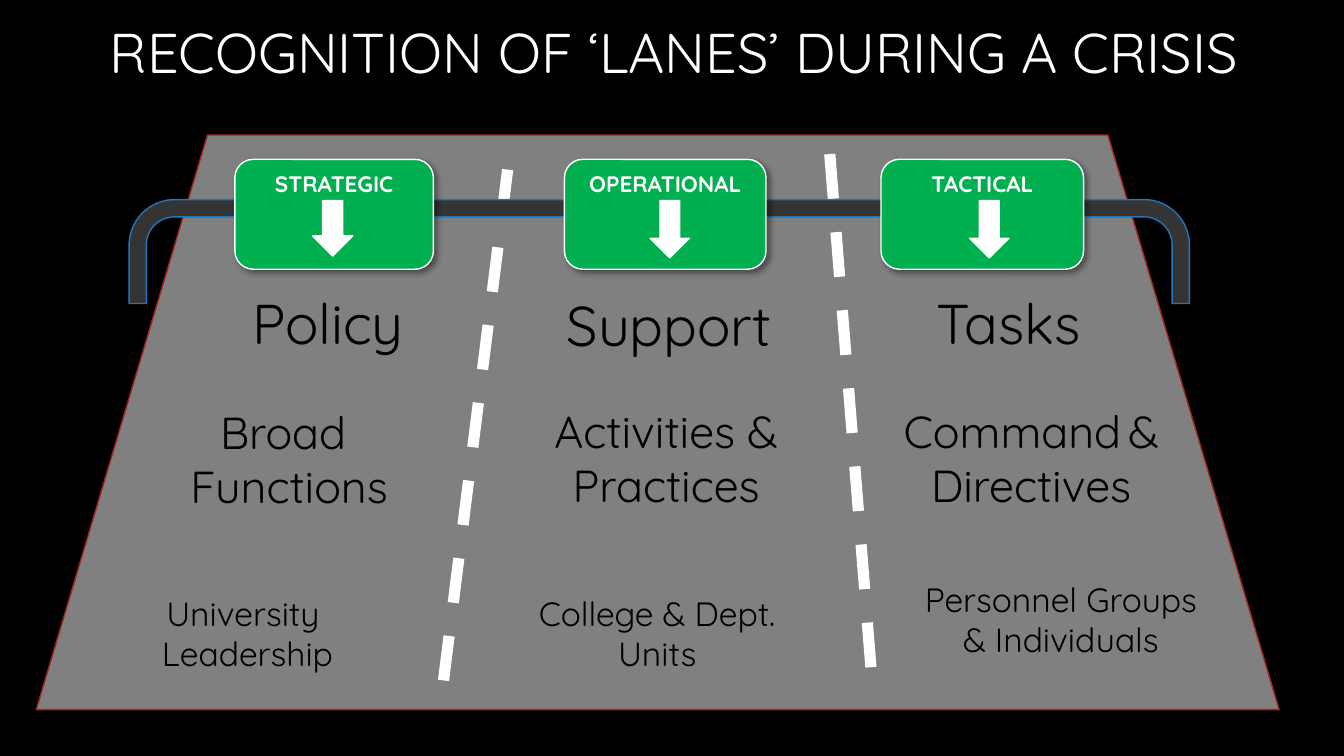
from lxml.etree import SubElement
from pptx import Presentation
from pptx.dml.color import RGBColor
from pptx.enum.dml import MSO_LINE
from pptx.enum.shapes import MSO_CONNECTOR, MSO_SHAPE
from pptx.enum.text import MSO_ANCHOR, PP_ALIGN
from pptx.oxml.ns import qn
from pptx.util import Pt

FONT = "Quicksand"
BLACK, WHITE, GREEN = "000000", "FFFFFF", "00B050"
ROAD, EDGE, POLE, RIM = "808080", "A5221E", "343434", "2476B9"

TITLE = "RECOGNITION OF ‘LANES’ DURING A CRISIS"
SIGN_TOP, SIGN_HIGH, ARROW_TOP = 113.8, 78.5, 143.3

# Sign: word, left, width; arrow: left, width, height
SIGNS = [
    ("STRATEGIC", 167.8, 141.8, 223.2, 28.8, 39.6),
    ("OPERATIONAL", 403.2, 144, 464.4, 28.1, 41),
    ("TACTICAL", 629.3, 144.7, 692.6, 28.1, 41),
]

# Each row: size, height, then (left, top, width, paragraphs) per lane
ROWS = [
    (40, 55.4, [
        (169.9, 202.3, 128.9, ["Policy"]),
        (394.6, 203.8, 166.3, ["Support"]),
        (632.2, 202.3, 176.4, ["Tasks"]),
    ]),
    (32, 85, [
        (126, 285.8, 161.3, ["Broad ", "Functions"]),
        (379.4, 285.1, 193, ["Activities & Practices"]),
        (629.3, 285.1, 214.6,
         [["Command", (" ", 18), "&", (" ", 18), "Directives"]]),
    ]),
    (24, 65.5, [
        (105.1, 419.8, 143.3, ["University ", "Leadership"]),
        (367.2, 419.8, 204.5, ["College & Dept.", "Units"]),
        (648, 409.7, 219.6, ["Personnel Groups", "& Individuals"]),
    ]),
]

# Lane marks: from x, y to x, y
MARKS = [(622.1, 476.6, 592.6, 108.7), (316.8, 486, 365, 102.2)]
# Poles: left, width, flipped
POLES = [(510.5, 339.1, True), (92.2, 388.1, False)]


def color(code):
    return RGBColor.from_string(code)


def write(frame, paras, size, tint, bold=False):
    """Fill a frame; a paragraph is a string or a list of strings and (text, size)."""
    frame.word_wrap = True
    for i, para in enumerate(paras):
        line = frame.paragraphs[0] if i == 0 else frame.add_paragraph()
        line.alignment = PP_ALIGN.CENTER
        for part in [para] if isinstance(para, str) else para:
            text, pts = (part, size) if isinstance(part, str) else part
            run = line.add_run()
            run.text = text
            run.font.name = FONT
            run.font.size = Pt(pts)
            run.font.bold = bold
            run.font.color.rgb = color(tint)


def label(box, paras, size, tint):
    frame = slide.shapes.add_textbox(*map(Pt, box)).text_frame
    write(frame, paras, size, tint)
    return frame


def draw(kind, box, fill, line, adjust=()):
    shape = slide.shapes.add_shape(kind, *map(Pt, box))
    shape.shadow.inherit = False
    shape.fill.solid()
    shape.fill.fore_color.rgb = color(fill)
    shape.line.color.rgb = color(line)
    shape.line.width = Pt(1)
    for i, value in enumerate(adjust):
        shape.adjustments[i] = value
    return shape


def shade(shape):
    """Give a shape a soft shadow to the lower right."""
    effects = shape._element.spPr.find(qn("a:effectLst"))
    outer = SubElement(effects, qn("a:outerShdw"), blurRad=str(Pt(4)),
                       dist=str(Pt(3)), dir="2700000", algn="tl",
                       rotWithShape="0")
    tint = SubElement(outer, qn("a:srgbClr"), val=BLACK)
    SubElement(tint, qn("a:alpha"), val="40000")


deck = Presentation()
deck.slide_width, deck.slide_height = Pt(960), Pt(540)
slide = deck.slides.add_slide(deck.slide_layouts[6])
slide.background.fill.solid()
slide.background.fill.fore_color.rgb = color(BLACK)

head = label((18.7, 2.2, 925.2, 74.9), [TITLE], 40, WHITE)
head.vertical_anchor = MSO_ANCHOR.MIDDLE
head.paragraphs[0].line_spacing = 0.9

draw(MSO_SHAPE.TRAPEZOID, (25.9, 96.5, 887.8, 410.4), ROAD, EDGE, [0.298])

for ends in MARKS:
    mark = slide.shapes.add_connector(MSO_CONNECTOR.STRAIGHT, *map(Pt, ends))
    mark.line.color.rgb = color(WHITE)
    mark.line.width = Pt(8)
    mark.line.dash_style = MSO_LINE.DASH
    SubElement(mark._element.spPr, qn("a:effectLst"))

for left, width, flip in POLES:
    pole = draw(MSO_SHAPE.BENT_ARROW, (left, 142.6, width, 74.2), POLE, RIM,
                [0.25, 0.083, 0.25, 0.438])
    if flip:
        pole._element.spPr.find(qn("a:xfrm")).set("flipH", "1")

for word, left, width, tip, wide, high in SIGNS:
    sign = draw(MSO_SHAPE.ROUNDED_RECTANGLE,
                (left, SIGN_TOP, width, SIGN_HIGH), GREEN, WHITE)
    shade(sign)
    sign.text_frame.vertical_anchor = MSO_ANCHOR.TOP
    write(sign.text_frame, [word], 16, WHITE, True)
    draw(MSO_SHAPE.DOWN_ARROW, (tip, ARROW_TOP, wide, high), WHITE, WHITE)

for size, high, cells in ROWS:
    for left, top, width, paras in cells:
        label((left, top, width, high), paras, size, BLACK)

deck.save("out.pptx")
